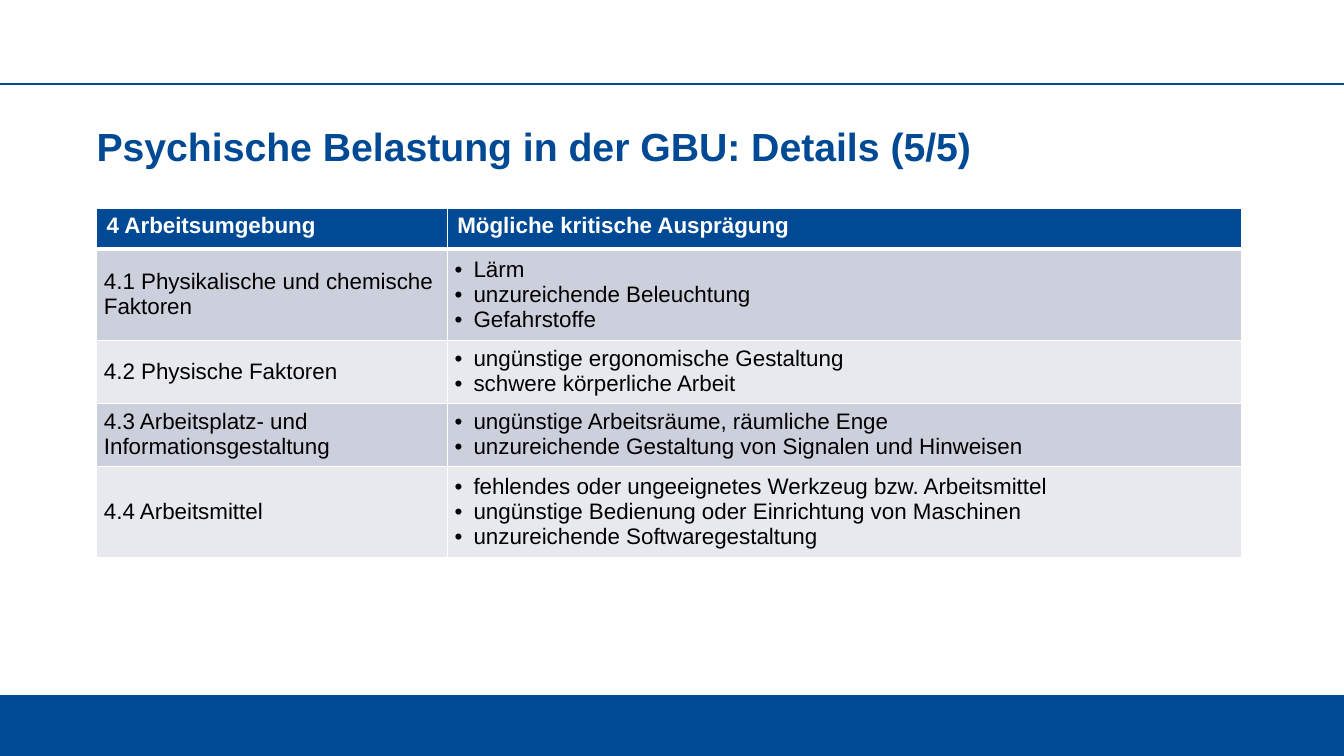
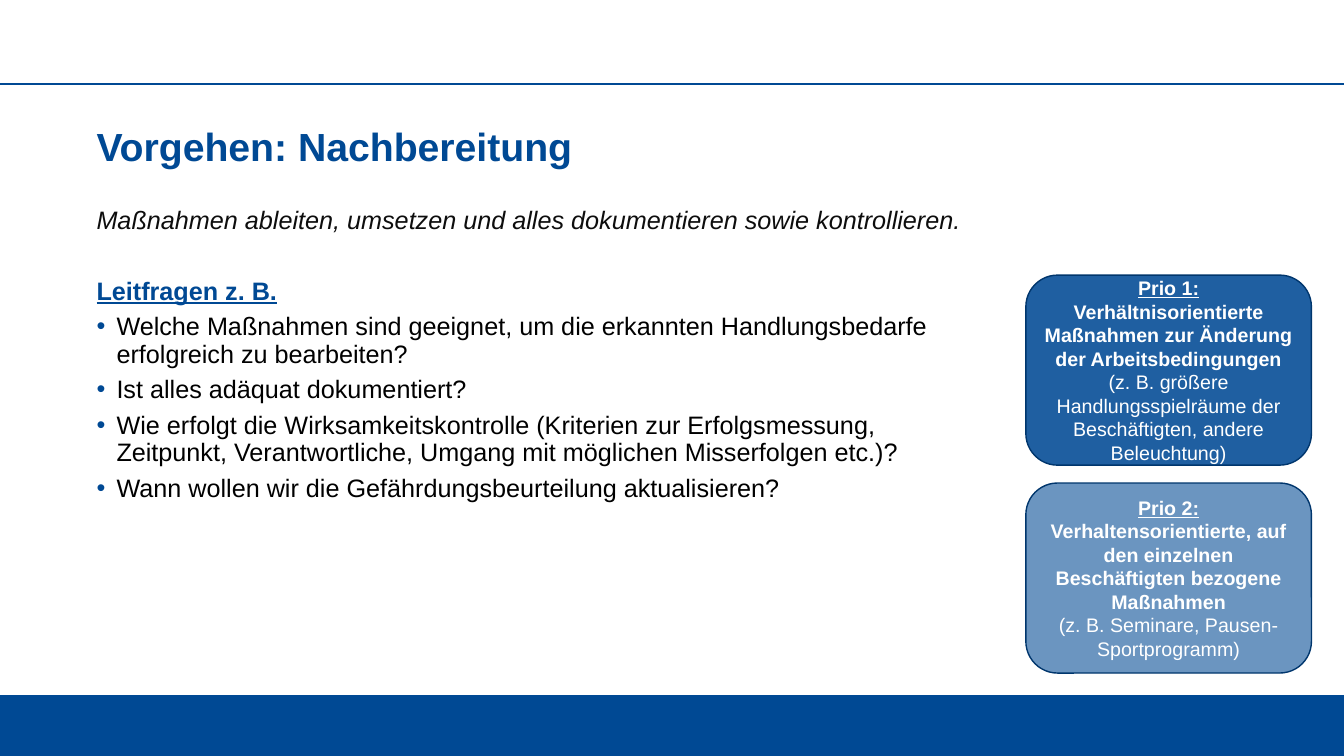
from lxml import etree
from pptx import Presentation
from pptx import util as u
from pptx.dml import color
from pptx.enum import shapes, text
from pptx.oxml import ns

SCALE = 9525
WIDTH, HEIGHT = 1280, 720
LEFT, CONTENT_TOP = 92, 198
FONT = "Arial"
BLUE, DARK_BLUE = "004994", "00366D"
WHITE, BLACK, NEAR_BLACK = "FFFFFF", "000000", "0D0D0D"
ROW_FILLS = ("CCD0DC", "E7E9EE")

COLUMN_WIDTHS = (334, 757)
HEADER = ("4 Arbeitsumgebung", "Mögliche kritische Ausprägung")
HEADER_HEIGHT = 39
FACTORS = (
    ("4.1 Physikalische und chemische Faktoren", 87,
     ("Lärm", "unzureichende Beleuchtung", "Gefahrstoffe")),
    ("4.2 Physische Faktoren", 60,
     ("ungünstige ergonomische Gestaltung", "schwere körperliche Arbeit")),
    ("4.3 Arbeitsplatz- und Informationsgestaltung", 60,
     ("ungünstige Arbeitsräume, räumliche Enge",
      "unzureichende Gestaltung von Signalen und Hinweisen")),
    ("4.4 Arbeitsmittel", 87,
     ("fehlendes oder ungeeignetes Werkzeug bzw. Arbeitsmittel",
      "ungünstige Bedienung oder Einrichtung von Maschinen",
      "unzureichende Softwaregestaltung")),
)

SUMMARY = "Maßnahmen ableiten, umsetzen und alles dokumentieren sowie kontrollieren."
QUESTIONS = (
    "Welche Maßnahmen sind geeignet, um die erkannten Handlungsbedarfe erfolgreich zu bearbeiten?",
    "Ist alles adäquat dokumentiert?",
    "Wie erfolgt die Wirksamkeitskontrolle (Kriterien zur Erfolgsmessung, Zeitpunkt, "
    "Verantwortliche, Umgang mit möglichen Misserfolgen etc.)?",
    "Wann wollen wir die Gefährdungsbeurteilung aktualisieren?",
)
PRIORITIES = (
    (88, "Prio 1:",
     ("", "Verhältnisorientierte", "Maßnahmen zur Änderung der Arbeitsbedingungen"),
     "(z. B. größere Handlungsspielräume der Beschäftigten, andere Beleuchtung)"),
    (58, "Prio 2:",
     (" Verhaltensorientierte, auf den einzelnen Beschäftigten bezogene", "Maßnahmen"),
     "(z. B. Seminare, Pausen-Sportprogramm)"),
)


def px(length):
    return u.Emu(length * SCALE)


def rgb(value):
    return color.RGBColor.from_string(value)


def add_child(parent, tag, **attributes):
    return etree.SubElement(parent, ns.qn(tag), attributes)


def add_span(para, content, size, ink, bold=False, italic=False, underline=False):
    span = para.add_run()
    span.text = content
    font = span.font
    font.name, font.size = FONT, u.Pt(size)
    font.bold, font.italic, font.underline = bold, italic, underline
    font.color.rgb = rgb(ink)


def next_para(frame):
    first = frame.paragraphs[0]
    return frame.add_paragraph() if first.runs else first


def set_bullet(para, indent, ink):
    properties = para._p.get_or_add_pPr()
    properties.set("marL", str(px(indent)))
    properties.set("indent", str(-px(indent)))
    add_child(add_child(properties, "a:buClr"), "a:srgbClr", val=ink)
    add_child(properties, "a:buFont", typeface=FONT)
    add_child(properties, "a:buChar", char="•")


def set_margins(target, left, top, right, bottom):
    target.margin_left, target.margin_top = px(left), px(top)
    target.margin_right, target.margin_bottom = px(right), px(bottom)


def add_box(page, left, top, width, height):
    box = page.shapes.add_textbox(px(left), px(top), px(width), px(height))
    box.text_frame.word_wrap = True
    set_margins(box.text_frame, 0, 0, 10, 5)
    return box.text_frame


def add_body_para(frame, content, ink, before=0, bullet=False, **style):
    para = next_para(frame)
    if bullet:
        set_bullet(para, 19, BLUE)
    para.line_spacing = 0.9
    para.space_before = u.Pt(before)
    add_span(para, content, 18, ink, **style)


def add_page(deck, title):
    page = deck.slides.add_slide(deck.slide_layouts[6])
    band = page.shapes.add_shape(
        shapes.MSO_SHAPE.RECTANGLE, 0, px(662), px(WIDTH), px(HEIGHT - 662))
    band.shadow.inherit = False
    band.fill.solid()
    band.fill.fore_color.rgb = rgb(BLUE)
    band.line.fill.background()

    rule = page.shapes.add_connector(
        shapes.MSO_CONNECTOR.STRAIGHT, 0, px(80), px(WIDTH), px(80))
    rule.line.color.rgb = rgb(BLUE)
    rule.line.width = u.Pt(2)
    add_child(rule._element.spPr, "a:effectLst")

    para = add_box(page, LEFT, 122, 1096, 55).paragraphs[0]
    para.line_spacing = 0.9
    add_span(para, title, 28, BLUE, bold=True)
    return page


def style_cell(cell, fill, top=1, bottom=1):
    properties = cell._tc.get_or_add_tcPr()
    for side, points in (("L", 1), ("R", 1), ("T", top), ("B", bottom)):
        border = add_child(properties, f"a:ln{side}", w=str(u.Pt(points)))
        add_child(add_child(border, "a:solidFill"), "a:srgbClr", val=WHITE)
    cell.fill.solid()
    cell.fill.fore_color.rgb = rgb(fill)


def add_factor_table(page):
    heights = [HEADER_HEIGHT] + [height for _, height, _ in FACTORS]
    table = page.shapes.add_table(
        len(heights), len(COLUMN_WIDTHS), px(LEFT), px(CONTENT_TOP),
        px(sum(COLUMN_WIDTHS)), px(sum(heights))).table
    for column, width in zip(table.columns, COLUMN_WIDTHS):
        column.width = px(width)
    for row, height in zip(table.rows, heights):
        row.height = px(height)

    for cell, label in zip(table.rows[0].cells, HEADER):
        style_cell(cell, BLUE, bottom=3)
        add_span(cell.text_frame.paragraphs[0], label, 16, WHITE, bold=True)

    for index, (factor, _, issues) in enumerate(FACTORS):
        cells = table.rows[index + 1].cells
        for cell, lines in zip(cells, ((factor,), issues)):
            style_cell(cell, ROW_FILLS[index % 2], top=1 if index else 3)
            set_margins(cell, 7, 0, 7, 0)
            cell.vertical_anchor = text.MSO_ANCHOR.MIDDLE
            for line in lines:
                para = next_para(cell.text_frame)
                if lines is issues:
                    set_bullet(para, 18, BLACK)
                add_span(para, line, 16, BLACK)


def add_questions(page):
    frame = add_box(page, LEFT, CONTENT_TOP, 850, 427)
    add_body_para(frame, SUMMARY, NEAR_BLACK, italic=True)
    add_body_para(frame, "Leitfragen z. B.", BLUE, before=31, bold=True, underline=True)
    for question in QUESTIONS:
        add_body_para(frame, question, BLACK, before=6, bullet=True)


def add_priority(page, top, opacity, label, measures, example):
    card = page.shapes.add_shape(
        shapes.MSO_SHAPE.ROUNDED_RECTANGLE, px(977), px(top), px(272), px(181))
    card.shadow.inherit = False
    card.fill.solid()
    card.fill.fore_color.rgb = rgb(BLUE)
    fill_color = card._element.spPr.find(ns.qn("a:solidFill"))[0]
    add_child(fill_color, "a:alpha", val=str(opacity * 1000))
    card.line.color.rgb = rgb(DARK_BLUE)
    card.line.width = u.Pt(1)

    frame = card.text_frame
    frame.word_wrap = True
    frame.vertical_anchor = text.MSO_ANCHOR.MIDDLE
    set_margins(frame, 4, 4, 4, 4)
    add_span(frame.paragraphs[0], label, 14, WHITE, bold=True, underline=True)
    if measures[0]:
        add_span(frame.paragraphs[0], measures[0], 14, WHITE, bold=True)
    for measure in measures[1:]:
        add_span(next_para(frame), measure, 14, WHITE, bold=True)
    add_span(next_para(frame), example, 14, WHITE)
    for para in frame.paragraphs:
        para.alignment = text.PP_ALIGN.CENTER


def main():
    deck = Presentation()
    deck.slide_width, deck.slide_height = px(WIDTH), px(HEIGHT)

    add_factor_table(add_page(deck, "Psychische Belastung in der GBU: Details (5/5)"))

    follow_up = add_page(deck, "Vorgehen: Nachbereitung")
    add_questions(follow_up)
    for index, priority in enumerate(PRIORITIES):
        add_priority(follow_up, 262 + index * 198, *priority)

    deck.save("out.pptx")


if __name__ == "__main__":
    main()
